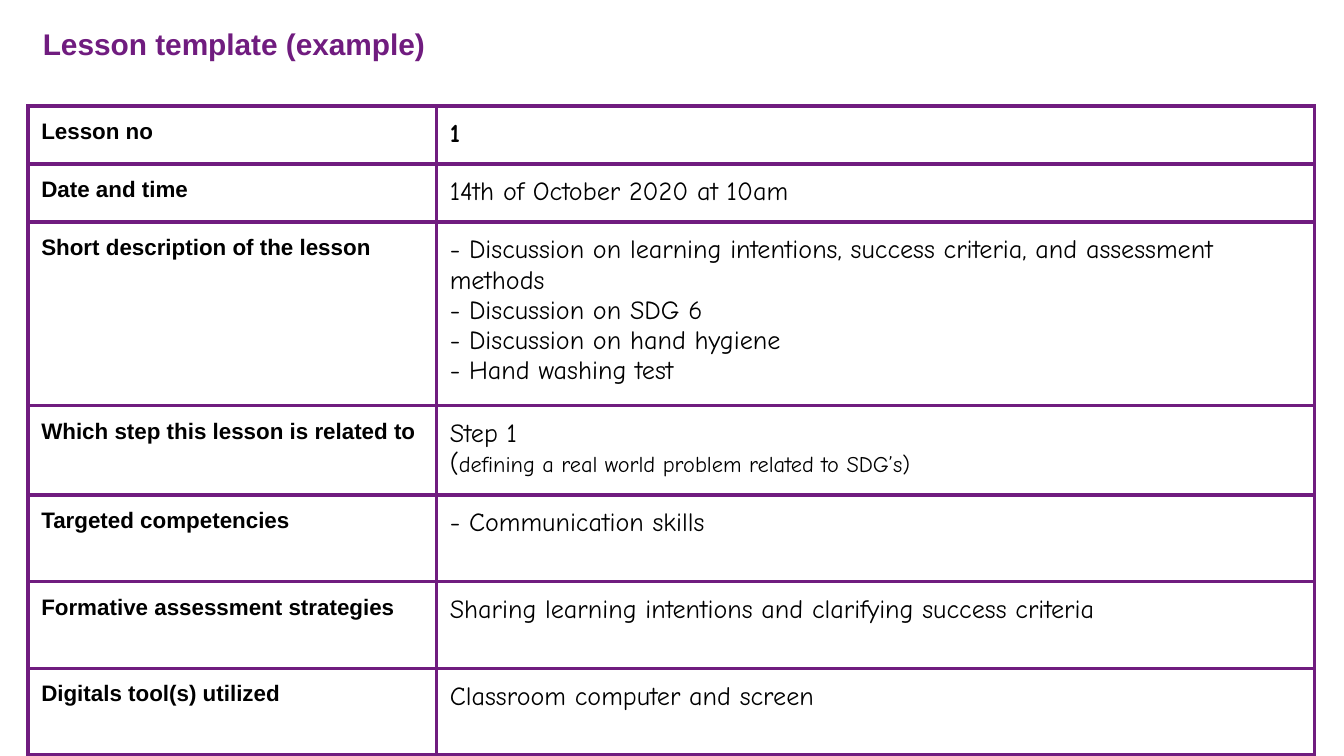
from lxml import etree
from pptx import Presentation
from pptx import util as u
from pptx.dml.color import RGBColor
from pptx.enum import text
from pptx.oxml.ns import qn

COLOURS = {"purple": "701C7F", "black": "000000"}
LABEL_FONT, ENTRY_FONT = "Arial", "Comic Neue"
INSET = u.Cm(0.25)

# Label, entry lines, row height in cm
ROWS = [
    ("Lesson no", ["1"], 1.1),
    ("Date and time", ["14th of October 2020 at 10am"], 1.1),
    ("Short description of the lesson",
     ["- Discussion on learning intentions, success criteria, and assessment methods",
      "- Discussion on SDG 6",
      "- Discussion on hand hygiene",
      "- Hand washing test"], 3.35),
    ("Which step this lesson is related to",
     ["Step 1", "(defining a real world problem related to SDG’s)"], 1.64),
    ("Targeted competencies", ["- Communication skills"], 1.64),
    ("Formative assessment strategies",
     ["Sharing learning intentions and clarifying success criteria"], 1.64),
    ("Digitals tool(s) utilized", ["Classroom computer and screen"], 1.64),
]


def format_run(r, font, size, colour, bold=False):
    r.font.name = font
    r.font.size = u.Pt(size)
    r.font.bold = bold
    r.font.color.rgb = RGBColor.from_string(COLOURS[colour])


def set_insets(box):
    box.margin_left = box.margin_right = INSET
    box.margin_top = box.margin_bottom = INSET


def add_title(s, title):
    sp = s.shapes.add_textbox(u.Cm(0.56), u.Cm(0.23), u.Cm(23.37), u.Cm(2.97))
    tf = sp.text_frame
    tf.word_wrap = True
    tf.vertical_anchor = text.MSO_ANCHOR.TOP
    set_insets(tf)
    tf.text = title
    format_run(tf.paragraphs[0].runs[0], LABEL_FONT, 16, "purple", True)


def set_borders(cell, colour, width):
    """Draw all four sides; border elements must precede the fill."""
    tc_pr = cell._tc.get_or_add_tcPr()
    for i, side in enumerate(("a:lnL", "a:lnR", "a:lnT", "a:lnB")):
        ln = etree.Element(qn(side), w=str(u.Pt(width)))
        fill = etree.SubElement(ln, qn("a:solidFill"))
        etree.SubElement(fill, qn("a:srgbClr"), val=COLOURS[colour])
        tc_pr.insert(i, ln)


def fill_cell(cell, lines, font, size, bold=False):
    cell.fill.background()
    set_borders(cell, "purple", 2.25)
    set_insets(cell)
    cell.vertical_anchor = text.MSO_ANCHOR.TOP
    cell.text_frame.text = "\n".join(lines)
    for p in cell.text_frame.paragraphs:
        format_run(p.runs[0], font, size, "black", bold)


def shrink_after_bracket(p):
    """Keep the opening bracket large and set the remark smaller."""
    bracket = p.runs[0]
    remark = p.add_run()
    remark.text = bracket.text[1:]
    bracket.text = bracket.text[0]
    format_run(remark, ENTRY_FONT, 12, "black")


def add_lesson_table(s):
    height = u.Cm(sum(row[2] for row in ROWS))
    frame = s.shapes.add_table(len(ROWS), 2, u.Cm(0.53), u.Cm(2), u.Cm(24.31), height)
    table = frame.table
    table.first_row = table.horz_banding = False
    for column, width in zip(table.columns, (7.72, 16.59)):
        column.width = u.Cm(width)
    for i, (label, entry, row_height) in enumerate(ROWS):
        table.rows[i].height = u.Cm(row_height)
        fill_cell(table.cell(i, 0), [label], LABEL_FONT, 12, True)
        fill_cell(table.cell(i, 1), entry, ENTRY_FONT, 14, i == 0)
        for p in table.cell(i, 1).text_frame.paragraphs:
            if p.text.startswith("("):
                shrink_after_bracket(p)


def main():
    prs = Presentation()
    prs.slide_width, prs.slide_height = u.Cm(25.4), u.Cm(14.29)
    s = prs.slides.add_slide(prs.slide_layouts[6])

    # Heading
    add_title(s, "Lesson template (example)")

    # Lesson plan
    add_lesson_table(s)

    prs.save("out.pptx")


if __name__ == "__main__":
    main()
